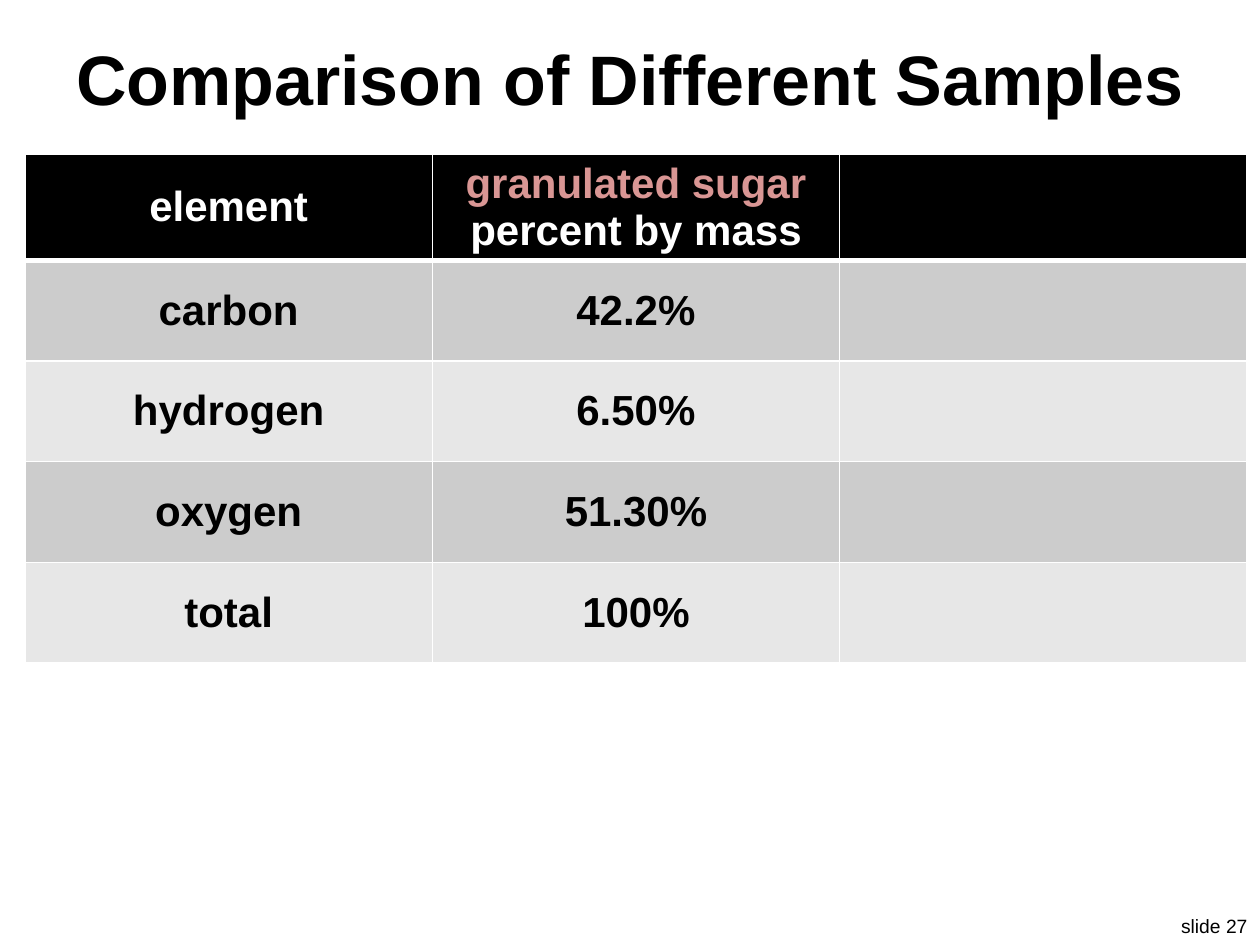
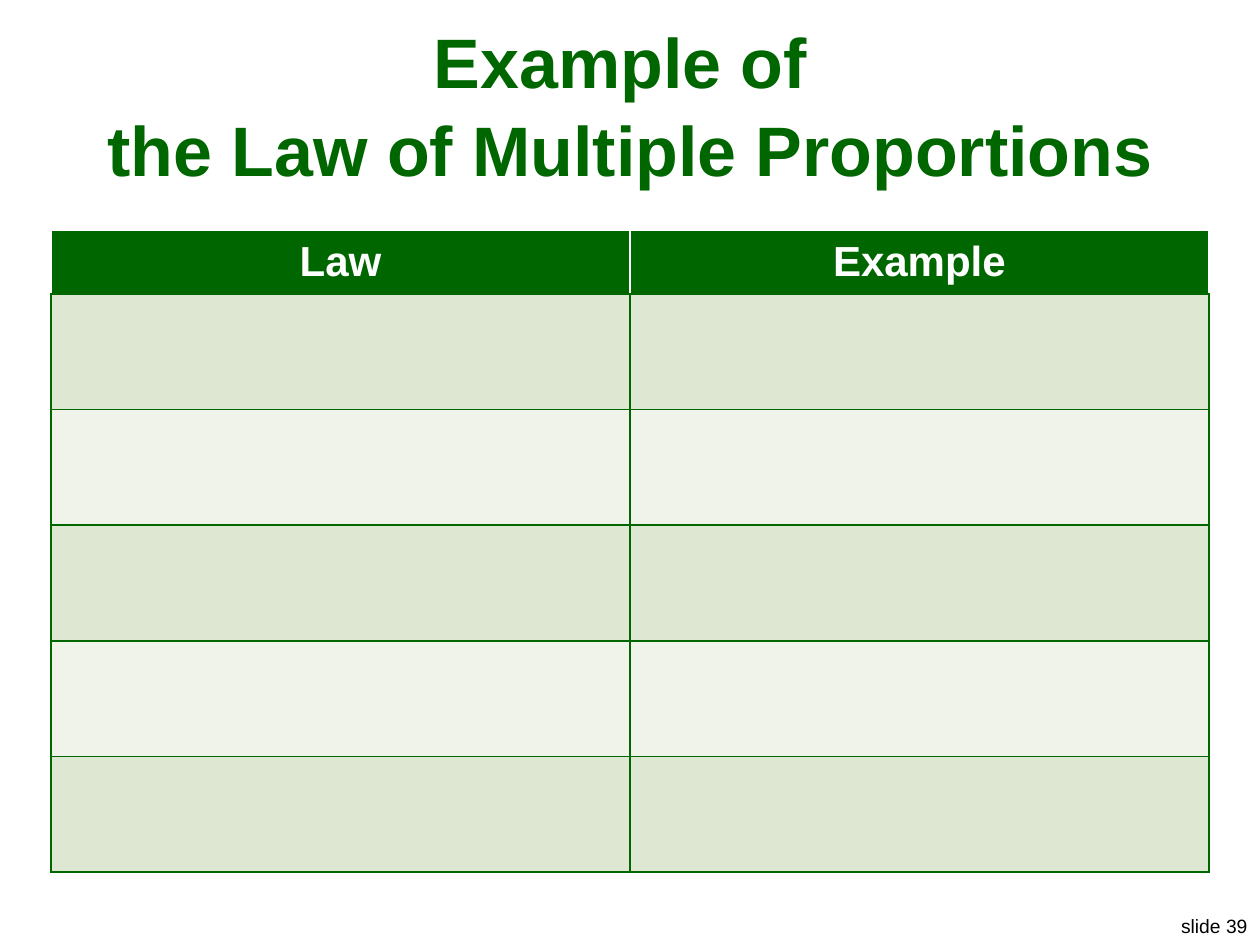
from pptx import Presentation
from pptx.dml.color import RGBColor
from pptx.enum.text import MSO_ANCHOR, MSO_AUTO_SIZE, PP_ALIGN
from pptx.oxml.ns import qn
from pptx.util import Pt
from lxml import etree

PX = 914400 / 126
SLIDE_WIDTH, SLIDE_HEIGHT = 1260, 945
TITLE_ONLY = 5
FONT = "Arial"
CENTER, RIGHT = PP_ALIGN.CENTER, PP_ALIGN.RIGHT
MIDDLE = MSO_ANCHOR.MIDDLE
NO_AUTOFIT = MSO_AUTO_SIZE.NONE

BLACK = RGBColor(0x00, 0x00, 0x00)
WHITE = RGBColor(0xFF, 0xFF, 0xFF)
GREEN = RGBColor(0x00, 0x66, 0x00)
ROSE = RGBColor(0xD9, 0x96, 0x94)
GRAY_BANDS = RGBColor(0xCC, 0xCC, 0xCC), RGBColor(0xE7, 0xE7, 0xE7)
GREEN_BANDS = RGBColor(0xDE, 0xE7, 0xD1), RGBColor(0xEF, 0xF3, 0xEA)


def emu(*lengths):
    """Turn px lengths into EMU."""
    return [round(length * PX) for length in lengths]


def style(paragraph, size, color, bold=True, alignment=CENTER):
    """Format one whole paragraph."""
    paragraph.alignment = alignment
    font = paragraph.font
    font.name, font.size, font.bold = FONT, Pt(size), bold
    font.color.rgb = color


def add_title(slide, box, text, color):
    """Place and format the title placeholder."""
    title = slide.shapes.title
    title.left, title.top, title.width, title.height = emu(*box)
    frame = title.text_frame
    frame.auto_size, frame.vertical_anchor = NO_AUTOFIT, MIDDLE
    frame.text = text
    style(frame.paragraphs[0], 40, color)
    frame.paragraphs[0].line_spacing = 1.04


def add_footer(slide, number):
    """Write the slide number in the bottom right corner."""
    footer = slide.shapes.add_textbox(*emu(1160, 908, 100, 37))
    frame = footer.text_frame
    frame.word_wrap = True
    frame.text = f"slide {number}"
    style(frame.paragraphs[0], 11, BLACK, bold=False, alignment=RIGHT)


def set_borders(cell, edges):
    """Draw the left, right, top and bottom edges, each a colour and a width."""
    properties = cell._tc.get_or_add_tcPr()
    for index, (side, (color, width)) in enumerate(zip("LRTB", edges)):
        line = etree.Element(qn(f"a:ln{side}"), w=str(Pt(width)))
        fill = etree.SubElement(line, qn("a:solidFill"))
        etree.SubElement(fill, qn("a:srgbClr"), val=str(color))
        properties.insert(index, line)


def add_banded_table(slide, box, header_height, rows, header_color, bands, line_color, rule_width):
    """Add a table with a dark header above banded rows of equal height."""
    left, top, width, height = box
    column_count = len(rows[0])
    table = slide.shapes.add_table(len(rows), column_count, *emu(*box)).table
    row_height = (height - header_height) / (len(rows) - 1)
    for column in table.columns:
        column.width = emu(width / column_count)[0]
    inner, rule = (line_color, 1), (line_color, rule_width)
    for row_index, row in enumerate(rows):
        is_header = row_index == 0
        table.rows[row_index].height = emu(header_height if is_header else row_height)[0]
        side = (WHITE, 1) if is_header else inner
        upper = side if is_header else rule if row_index == 1 else inner
        lower = rule if is_header else inner
        for column_index, text in enumerate(row):
            cell = table.cell(row_index, column_index)
            cell.fill.solid()
            cell.fill.fore_color.rgb = header_color if is_header else bands[(row_index - 1) % 2]
            set_borders(cell, (side, side, upper, lower))
            cell.vertical_anchor = MIDDLE
            cell.text = text
            for paragraph in cell.text_frame.paragraphs:
                style(paragraph, 24, WHITE if is_header else BLACK)
    return table


def build_samples_slide(slide):
    """Build the comparison of samples by percent of mass."""
    add_title(slide, (25, 25, 1210, 101), "Comparison of Different Samples", BLACK)
    rows = [
        ("element", "granulated sugar\npercent by mass", ""),
        ("carbon", "42.2%", ""),
        ("hydrogen", "6.50%", ""),
        ("oxygen", "51.30%", ""),
        ("total", "100%", ""),
    ]
    table = add_banded_table(slide, (25, 154, 1222, 508), 105, rows, BLACK, GRAY_BANDS, WHITE, 3)
    table.cell(0, 1).text_frame.paragraphs[0].font.color.rgb = ROSE
    add_footer(slide, 27)


def build_law_slide(slide):
    """Build the empty worksheet on multiple proportions."""
    add_title(slide, (25, 42, 1210, 122), "Example of \vthe Law of Multiple Proportions", GREEN)
    rows = [("Law", "Example")] + [("", "")] * 5
    add_banded_table(slide, (51, 230, 1158, 642), 64, rows, GREEN, GREEN_BANDS, GREEN, 1)
    add_footer(slide, 39)


def main():
    """Build and save the presentation."""
    presentation = Presentation()
    presentation.slide_width, presentation.slide_height = emu(SLIDE_WIDTH, SLIDE_HEIGHT)
    for build in (build_samples_slide, build_law_slide):
        build(presentation.slides.add_slide(presentation.slide_layouts[TITLE_ONLY]))
    presentation.save("out.pptx")


if __name__ == "__main__":
    main()
